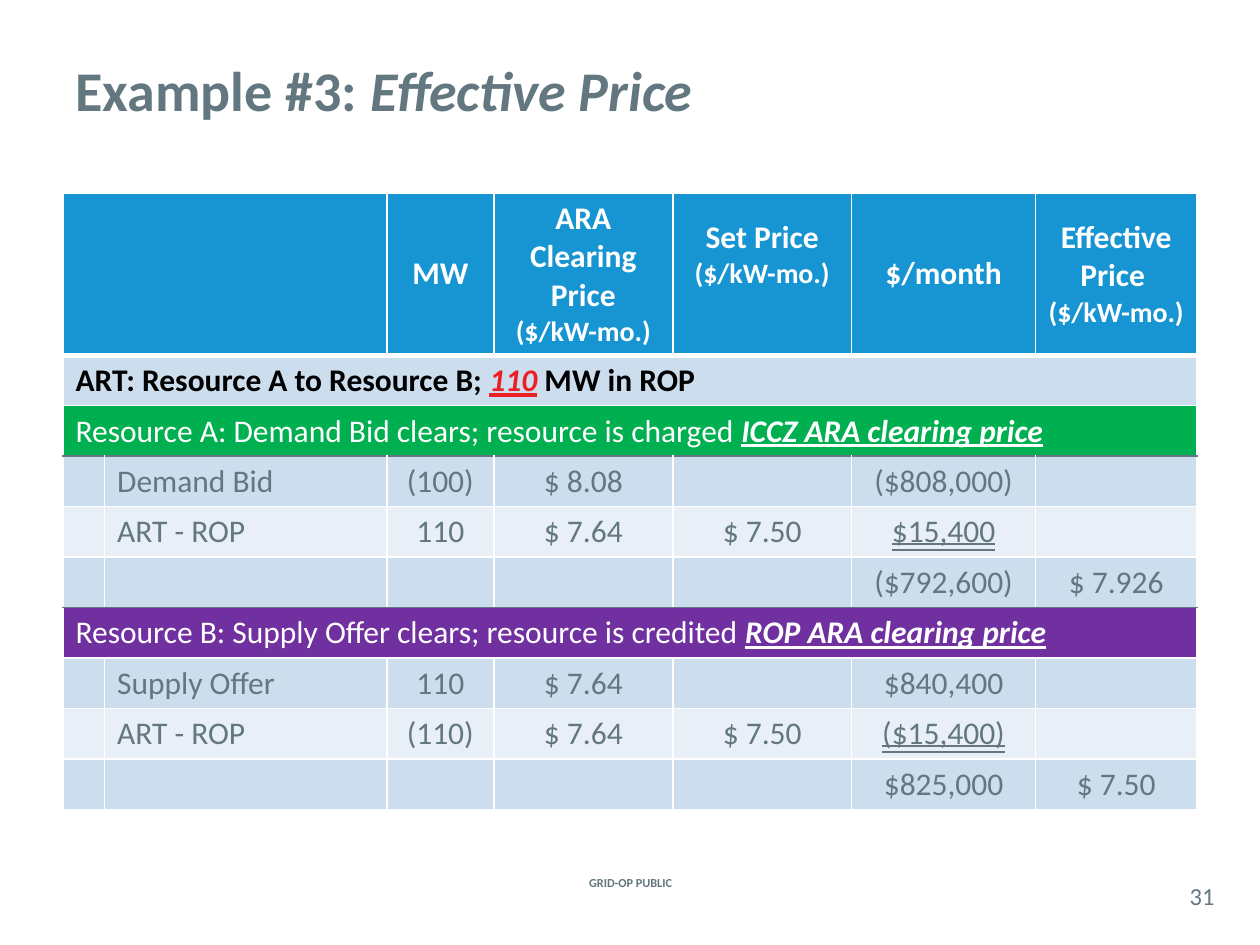
import lxml.etree
import pptx
import pptx.dml.color
import pptx.enum.text
import pptx.oxml.ns
import pptx.util

Inches = pptx.util.Inches
Pt = pptx.util.Pt
qn = pptx.oxml.ns.qn
Align = pptx.enum.text.PP_ALIGN
Middle = pptx.enum.text.MSO_ANCHOR.MIDDLE
Double = pptx.enum.text.MSO_UNDERLINE.DOUBLE_LINE

SLATE, WHITE, BLACK, RED = "62777F", "FFFFFF", "000000", "EC1F25"
BLUE, GREEN, PURPLE = "1795D2", "00B050", "7030A0"
DARK, LIGHT = "CCDDEE", "E8EFF7"

# A run is (text, size, colour, style); style letters: b, i, u, d (double underline)
TITLE = [("Example #3: ", 32, SLATE, "b"), ("Effective Price", 32, SLATE, "bi")]
FOOTER = [("GRID-OP PUBLIC", 7, SLATE, "b")]
NUMBER = [("31", 14, SLATE, "")]

UNIT = ("($/kW-mo.)", 16, WHITE, "b")


def head(text):
    return (text, 18, WHITE, "b")


# Each header cell is a list of paragraphs
HEADS = [
    [], [],
    [[head("MW")]],
    [[head("ARA Clearing Price")], [UNIT]],
    [[head("Set Price "), UNIT]],
    [[head("$/month")]],
    [[head("Effective Price ")], [UNIT]],
]
BANDS = {
    1: (DARK, [("ART: Resource A to Resource B; ", 18, BLACK, "b"),
               ("110", 18, RED, "biu"), (" ", 18, RED, "bi"),
               ("MW in ROP", 18, BLACK, "b")]),
    2: (GREEN, [("Resource A: Demand Bid clears; resource is charged ", 18, WHITE, ""),
                ("ICCZ ARA clearing price", 18, WHITE, "biu")]),
    6: (PURPLE, [("Resource B: Supply Offer clears; resource is credited ", 18, WHITE, ""),
                 ("ROP ARA clearing price", 18, WHITE, "biu")]),
}
ROWS = {
    3: ["", "Demand Bid", "(100)", "$ 8.08", "", "($808,000)", ""],
    4: ["", "ART - ROP", "110", "$ 7.64", "$ 7.50", "$15,400", ""],
    5: ["", "", "", "", "", "($792,600)", "$ 7.926"],
    7: ["", "Supply Offer", "110", "$ 7.64", "", "$840,400", ""],
    8: ["", "ART - ROP", "(110)", "$ 7.64", "$ 7.50", "($15,400)", ""],
    9: ["", "", "", "", "", "$825,000", "$ 7.50"],
}
LAST_ADDEND = {4, 8}    # lighter rows whose amount is double underlined
WIDTHS = [0.33, 2.24, 0.85, 1.42, 1.42, 1.46, 1.28]
HEIGHTS = [1.29] + [0.4] * 9
RULES = {1: (WHITE, 3), 3: (SLATE, 1), 6: (SLATE, 1)}   # by line, from the top


def tint(text):
    return pptx.dml.color.RGBColor.from_string(text)


def write(frame, paras, align=Align.LEFT):
    for at, runs in enumerate(paras):
        para = frame.add_paragraph() if at else frame.paragraphs[0]
        para.alignment = align
        for text, size, color, style in runs:
            run = para.add_run()
            run.text = text
            font = run.font
            font.name, font.size = "Calibri", Pt(size)
            font.color.rgb = tint(color)
            font.bold, font.italic = "b" in style, "i" in style
            font.underline = Double if "d" in style else "u" in style


def label(slide, box, runs, align, inset=None):
    frame = slide.shapes.add_textbox(*map(Inches, box)).text_frame
    frame.word_wrap = True
    frame.vertical_anchor = Middle
    if inset is not None:
        frame.margin_left = frame.margin_right = Inches(inset)
        frame.margin_top = frame.margin_bottom = Inches(inset)
    write(frame, [runs], align)


def paint(cell, row, fill):
    """Set the borders of a cell, then its fill."""
    props = cell._tc.get_or_add_tcPr()
    plain = (WHITE, 1)
    sides = {"L": plain, "R": plain,
             "T": RULES.get(row, plain), "B": RULES.get(row + 1, plain)}
    for side, (color, width) in sides.items():
        line = lxml.etree.SubElement(props, qn("a:ln" + side), w=str(Pt(width)))
        solid = lxml.etree.SubElement(line, qn("a:solidFill"))
        lxml.etree.SubElement(solid, qn("a:srgbClr"), val=color)
    cell.fill.solid()
    cell.fill.fore_color.rgb = tint(fill)


def fill_row(table, row):
    cells = [table.cell(row, col) for col in range(len(WIDTHS))]
    if row == 0:
        fill = BLUE
        cells[0].merge(cells[1])
        for cell, paras in zip(cells, HEADS):
            cell.vertical_anchor = Middle
            write(cell.text_frame, paras, Align.CENTER)
        cells[4].margin_bottom = Inches(0.35)
    elif row in BANDS:
        fill, runs = BANDS[row]
        cells[0].merge(cells[-1])
        write(cells[0].text_frame, [runs])
    else:
        fill = LIGHT if row in LAST_ADDEND else DARK
        for col, text in enumerate(ROWS[row]):
            if text:
                style = "d" if col == 5 and row in LAST_ADDEND else ""
                align = Align.CENTER if col > 1 else Align.LEFT
                write(cells[col].text_frame, [[(text, 18, SLATE, style)]], align)
    for cell in cells:
        paint(cell, row, fill)


def main():
    deck = pptx.Presentation()
    deck.slide_width, deck.slide_height = Inches(10), Inches(7.5)
    slide = deck.slides.add_slide(deck.slide_layouts[6])
    label(slide, (4.27, 6.92, 1.47, 0.17), FOOTER, Align.CENTER)
    label(slide, (9.33, 6.96, 0.42, 0.29), NUMBER, Align.CENTER, 0)
    label(slide, (0.5, 0.08, 9, 1.25), TITLE, Align.LEFT)

    box = (0.5, 1.53, sum(WIDTHS), sum(HEIGHTS))
    table = slide.shapes.add_table(
        len(HEIGHTS), len(WIDTHS), *map(Inches, box)).table
    for column, width in zip(table.columns, WIDTHS):
        column.width = Inches(width)
    for row, height in enumerate(HEIGHTS):
        table.rows[row].height = Inches(height)
        fill_row(table, row)
    deck.save("out.pptx")


if __name__ == "__main__":
    main()
